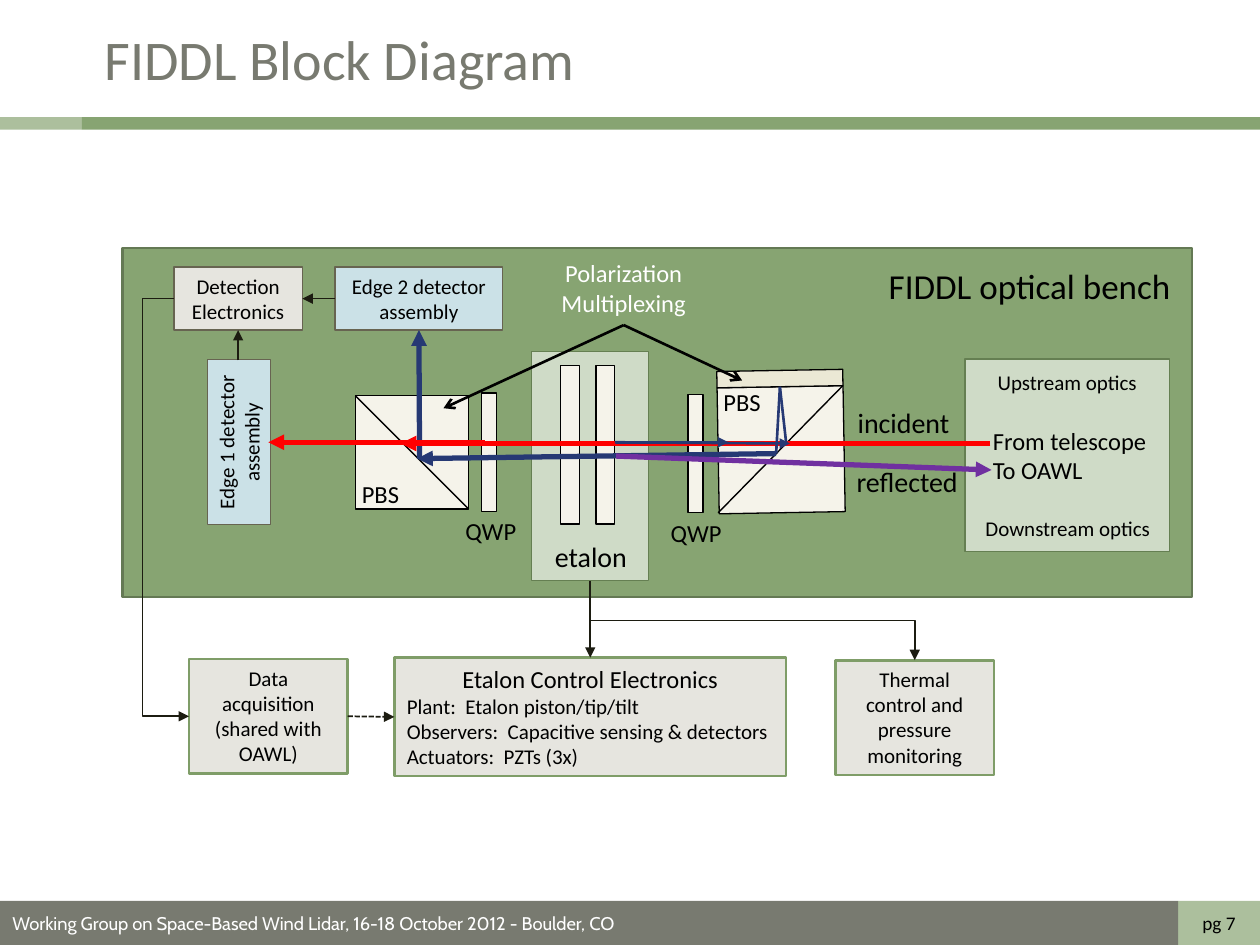
from lxml import etree
from pptx import Presentation
from pptx.dml.color import RGBColor
from pptx.enum.dml import MSO_LINE
from pptx.enum.shapes import MSO_CONNECTOR, MSO_SHAPE
from pptx.enum.text import MSO_ANCHOR, PP_ALIGN
from pptx.oxml.ns import qn
from pptx.util import Inches, Pt

STRAIGHT, ELBOW = MSO_CONNECTOR.STRAIGHT, MSO_CONNECTOR.ELBOW
RECT = MSO_SHAPE.RECTANGLE
TOP, MIDDLE = MSO_ANCHOR.TOP, MSO_ANCHOR.MIDDLE
LEFT, CENTER, RIGHT = PP_ALIGN.LEFT, PP_ALIGN.CENTER, PP_ALIGN.RIGHT
SYS_DASH = MSO_LINE.SQUARE_DOT
SIDE_TOP, SIDE_LEFT, SIDE_BOTTOM, SIDE_RIGHT = range(4)

BLACK = RGBColor(0x00, 0x00, 0x00)
WHITE = RGBColor(0xFF, 0xFF, 0xFF)
GRAY = RGBColor(0x78, 0x7A, 0x70)
GREEN = RGBColor(0x87, 0xA4, 0x72)
LIGHT_GREEN = RGBColor(0xAC, 0xBF, 0x9D)
BENCH_EDGE = RGBColor(0x64, 0x79, 0x54)
PANEL = RGBColor(0xCF, 0xDB, 0xC7)
PANEL_EDGE = RGBColor(0x65, 0x7F, 0x52)
GLASS = RGBColor(0xF5, 0xF3, 0xEA)
COATING = RGBColor(0xEB, 0xE8, 0xD5)
DETECTOR = RGBColor(0xCB, 0xE1, 0xE7)
DETECTOR_EDGE = RGBColor(0x67, 0x64, 0x51)
BOX = RGBColor(0xE6, 0xE5, 0xDF)
BOX_EDGE = RGBColor(0x7F, 0x9D, 0x68)
WIRE = RGBColor(0x1C, 0x1C, 0x11)
RED = RGBColor(0xFF, 0x00, 0x00)
BLUE = RGBColor(0x26, 0x39, 0x74)
PURPLE = RGBColor(0x70, 0x30, 0xA0)


def write(tf, text, size=12, color=BLACK, font="Calibri", align=CENTER,
          anchor=TOP, wrap=True, first_size=None, first_align=None):
    """Fill a text frame, one paragraph per line; the first line may differ."""
    tf.word_wrap = wrap
    tf.vertical_anchor = anchor
    for i, line in enumerate(text.split("\n")):
        p = tf.paragraphs[0] if i == 0 else tf.add_paragraph()
        p.alignment = first_align if i == 0 and first_align else align
        r = p.add_run()
        r.text = line
        r.font.size = Pt(first_size if i == 0 and first_size else size)
        r.font.name = font
        r.font.color.rgb = color


def rect(shapes, at, fill, edge=None, width=0.75, rot=0, text=None, **fmt):
    sp = shapes.add_shape(RECT, *map(Inches, at))
    sp.shadow.inherit = False
    sp.rotation = rot
    sp.fill.solid()
    sp.fill.fore_color.rgb = fill
    if edge is None:
        sp.line.fill.background()
    else:
        sp.line.color.rgb = edge
        sp.line.width = Pt(width)
    if text:
        write(sp.text_frame, text, **fmt)
    return sp


def label(shapes, at, text, **fmt):
    sp = shapes.add_textbox(*map(Inches, at))
    write(sp.text_frame, text, **fmt)


def line(shapes, start, end, color=WIRE, width=1, head=None, dash=None,
         kind=STRAIGHT, begin_at=None, end_at=None):
    """Draw a connector; begin_at and end_at are (shape, side) pairs."""
    c = shapes.add_connector(kind, *map(Inches, (*start, *end)))
    if begin_at:
        c.begin_connect(*begin_at)
    if end_at:
        c.end_connect(*end_at)
    c.line.color.rgb = color
    c.line.width = Pt(width)
    if dash:
        c.line.dash_style = dash
    if head:
        ln = c.line._get_or_add_ln()
        etree.SubElement(ln, qn("a:tailEnd"), type=head)
    etree.SubElement(c._element.spPr, qn("a:effectLst"))
    return c


def set_bend(c, share):
    """Place the middle leg of an elbow at a share of its width."""
    av = c._element.spPr.find(qn("a:prstGeom")).get_or_add_avLst()
    etree.SubElement(av, qn("a:gd"), name="adj1", fmla=f"val {round(share * 100000)}")


def turn_elbow(c):
    """Make an elbow leave and arrive vertically instead of horizontally."""
    cx, cy = (c.begin_x + c.end_x) // 2, (c.begin_y + c.end_y) // 2
    dx, dy = (c.end_x - c.begin_x) // 2, (c.end_y - c.begin_y) // 2
    c.begin_x, c.begin_y = cx + dy, cy - dx
    c.end_x, c.end_y = cx - dy, cy + dx
    c._element.spPr.find(qn("a:xfrm")).set("rot", str(270 * 60000))


def beam_splitter(shapes, at, rot, start, end):
    g = shapes.add_group_shape().shapes
    rect(g, at, GLASS, BLACK, rot=rot)
    line(g, start, end, BLACK, 0.79)


def draw_frame(s):
    """Title, bars and footer."""
    for at, fill in (((0, 0.93, 0.65, 0.1), LIGHT_GREEN),
                     ((0.65, 0.93, 9.35, 0.1), GREEN)):
        rect(s.shapes, at, fill)
    rect(s.shapes, (9.35, 7.15, 0.65, 0.35), LIGHT_GREEN, text="pg 7",
         size=11, anchor=MIDDLE, wrap=False)
    rect(s.shapes, (0, 7.15, 9.35, 0.35), GRAY,
         text="Working Group on Space-Based Wind Lidar, 16-18 October 2012 - Boulder, CO",
         size=10.5, font="Cabin", color=WHITE, align=LEFT, anchor=MIDDLE)
    title = s.shapes.title
    title.left, title.top, title.width, title.height = map(Inches, (0.73, 0.16, 8.1, 0.61))
    write(title.text_frame, "FIDDL Block Diagram", size=32, color=GRAY,
          align=LEFT, anchor=MIDDLE)


def draw_optics(shapes):
    """Bench, etalon, wave plates and beam splitters; returns the etalon."""
    rect(shapes, (0.97, 1.97, 8.49, 2.77), GREEN, BENCH_EDGE, 1.5)
    telescope = rect(shapes, (7.66, 2.85, 1.62, 1.53), PANEL, PANEL_EDGE,
                     text="From telescope\nTo OAWL", size=14, align=LEFT, anchor=MIDDLE)
    telescope.text_frame.margin_left = Inches(0.22)
    etalon = rect(shapes, (4.22, 2.79, 0.93, 1.82), PANEL, PANEL_EDGE)
    for left, top, w, h in ((5.46, 3.13, 0.12, 0.94), (3.82, 3.12, 0.12, 0.94),
                            (4.45, 2.9, 0.15, 1.26), (4.73, 2.9, 0.15, 1.26)):
        rect(shapes, (left, top, w, h), GLASS, BLACK)
    beam_splitter(shapes, (5.7, 3.07, 1, 1), 359, (5.7, 4.07), (6.69, 3.06))
    beam_splitter(shapes, (2.82, 3.14, 0.9, 0.9), 0, (2.82, 3.14), (3.72, 4.04))
    rect(shapes, (5.69, 2.94, 1, 0.13), COATING, BLACK, rot=359)
    return etalon


def draw_beams(shapes, edge2):
    line(shapes, (6.16, 3.6), (3.31, 3.64), BLUE, 3, "triangle")
    line(shapes, (3.33, 3.64), (3.33, 2.62), BLUE, 3, "triangle", end_at=(edge2, SIDE_BOTTOM))
    line(shapes, (3.85, 3.51), (2.13, 3.51), RED, 3, "triangle")
    line(shapes, (7.86, 3.52), (3.18, 3.52), RED, 3, "triangle")
    line(shapes, (4.89, 3.62), (7.87, 3.73), PURPLE, 3, "triangle")
    for start, end, head in (((6.19, 3.07), (6.16, 3.6), None),
                             ((4.88, 3.51), (6.27, 3.52), "triangle"),
                             ((4.89, 3.51), (5.78, 3.51), "triangle"),
                             ((6.24, 3.52), (6.19, 3.07), None)):
        line(shapes, start, end, BLUE, 1.5, head)


def draw_labels(shapes):
    for at, text, size in (
            ((2.77, 3.75, 0.5, 0.34), "PBS", 14), ((5.64, 3.02, 0.5, 0.34), "PBS", 14),
            ((5.22, 4.06, 0.61, 0.34), "QWP", 14), ((3.59, 4.05, 0.61, 0.34), "QWP", 14),
            ((4.3, 4.23, 0.78, 0.37), "etalon", 16),
            ((6.7, 3.17, 0.94, 0.37), "incident", 16),
            ((6.69, 3.64, 1.02, 0.37), "reflected", 16),
            ((7.81, 2.88, 1.32, 0.3), "Upstream optics", 12),
            ((7.71, 4.04, 1.53, 0.3), "Downstream optics", 12)):
        label(shapes, at, text, size=size, wrap=False)
    label(shapes, (6.93, 2.05, 2.46, 0.44), "FIDDL optical bench", size=20,
          align=RIGHT, wrap=False)
    label(shapes, (4.2, 2, 1.5, 0.57), "Polarization Multiplexing", size=14, color=WHITE)
    for tip in ((5.89, 3.02), (3.52, 3.24)):
        line(shapes, (4.95, 2.58), tip, BLACK, 1.5, "arrow")


def draw_electronics(shapes, etalon):
    """Detectors, control boxes and their wiring; returns the edge 2 detector."""
    edge2 = rect(shapes, (2.66, 2.12, 1.33, 0.5), DETECTOR, DETECTOR_EDGE,
                 text="Edge 2 detector assembly")
    rect(shapes, (1.24, 3.26, 1.31, 0.5), DETECTOR, DETECTOR_EDGE, rot=270,
         text="Edge 1 detector assembly")
    detection = rect(shapes, (1.38, 2.12, 1.02, 0.5), BOX, DETECTOR_EDGE,
                     text="Detection Electronics")
    data = rect(shapes, (1.5, 5.23, 1.26, 0.91), BOX, BOX_EDGE, 1.5,
                text="Data acquisition (shared with OAWL)")
    control = rect(shapes, (3.13, 5.22, 3.11, 0.94), BOX, BOX_EDGE, 1.5,
                   text="Etalon Control Electronics\nPlant:  Etalon piston/tip/tilt\n"
                        "Observers:  Capacitive sensing & detectors\nActuators:  PZTs (3x)",
                   align=LEFT, first_size=14, first_align=CENTER)
    thermal = rect(shapes, (6.63, 5.24, 1.26, 0.91), BOX, BOX_EDGE, 1.5,
                   text="Thermal control and pressure monitoring")
    # Wiring
    line(shapes, (1.89, 2.86), (1.89, 2.62), head="triangle", end_at=(detection, SIDE_BOTTOM))
    line(shapes, (2.66, 2.37), (2.4, 2.37), head="triangle",
         begin_at=(edge2, SIDE_LEFT), end_at=(detection, SIDE_RIGHT))
    line(shapes, (2.76, 5.69), (3.13, 5.69), head="triangle", dash=SYS_DASH,
         begin_at=(data, SIDE_RIGHT), end_at=(control, SIDE_LEFT))
    line(shapes, (4.68, 4.61), (4.68, 5.22), head="triangle",
         begin_at=(etalon, SIDE_BOTTOM), end_at=(control, SIDE_TOP))
    set_bend(line(shapes, (1.38, 2.37), (1.5, 5.69), head="triangle", kind=ELBOW,
                  begin_at=(detection, SIDE_LEFT), end_at=(data, SIDE_LEFT)), -2.08)
    turn_elbow(line(shapes, (4.68, 4.61), (7.26, 5.24), head="triangle", kind=ELBOW,
                    begin_at=(etalon, SIDE_BOTTOM), end_at=(thermal, SIDE_TOP)))
    return edge2


def main():
    prs = Presentation()
    prs.slide_width, prs.slide_height = Inches(10), Inches(7.5)
    s = prs.slides.add_slide(prs.slide_layouts[5])
    draw_frame(s)
    etalon = draw_optics(s.shapes)
    edge2 = draw_electronics(s.shapes, etalon)
    draw_beams(s.shapes, edge2)
    draw_labels(s.shapes)
    prs.save("out.pptx")


if __name__ == "__main__":
    main()
